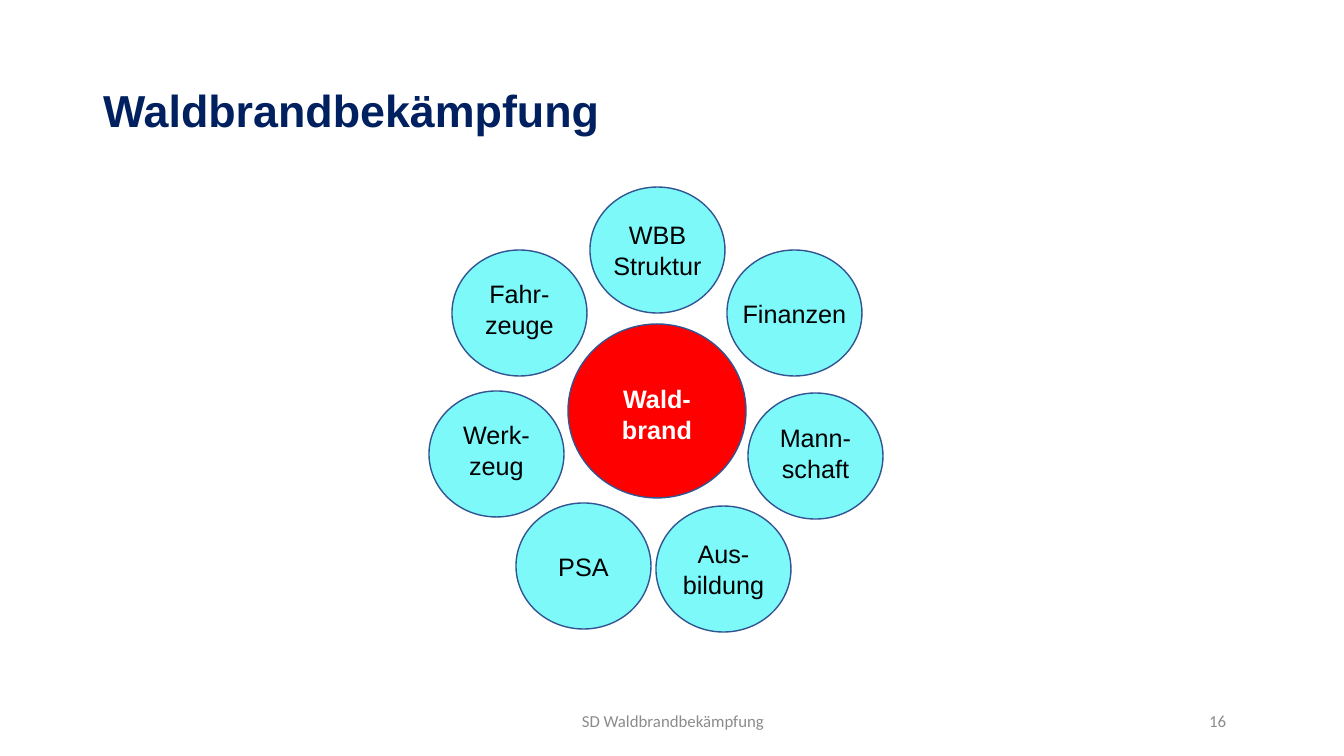
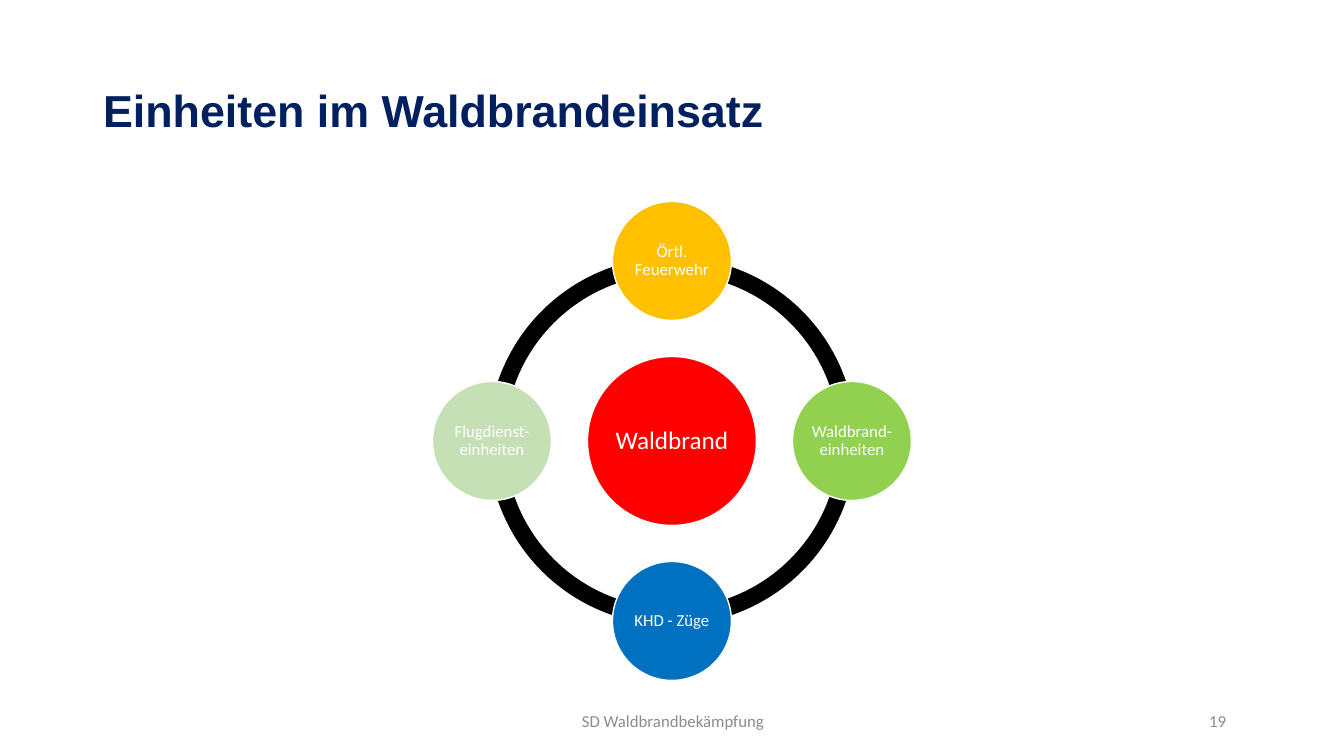
"""Build two slides on fighting forest fires, each a hub with circles around it."""
import math

from pptx import Presentation
from pptx.dml.color import RGBColor
from pptx.enum import shapes, text
from pptx.util import Pt

PX = 12192000 // 1344
COLORS = {
    "title": "002060", "footer": "8C8C8C", "fire": "FF0000", "petal": "7DF9F9",
    "outline": "325491", "black": "000000", "white": "FFFFFF", "amber": "FFC000",
    "green": "92D050", "blue": "0070C0", "sage": "C5E0B4",
}
COLORS = {name: RGBColor.from_string(value) for name, value in COLORS.items()}
SHAPE = shapes.MSO_SHAPE
ALIGN = text.PP_ALIGN


def write(shape, wording, size, color, font="Arial", bold=False,
          align=ALIGN.CENTER, spacing=1.0):
    frame = shape.text_frame
    frame.text = wording
    frame.word_wrap = True
    frame.auto_size = text.MSO_AUTO_SIZE.NONE
    frame.vertical_anchor = text.MSO_ANCHOR.MIDDLE
    para = frame.paragraphs[0]
    para.alignment = align
    para.line_spacing = spacing
    para.font.name = font
    para.font.size = Pt(size)
    para.font.bold = bold
    para.font.color.rgb = COLORS[color]
    return frame


def add_shape(page, kind, left, top, width, height, fill, line=None):
    shape = page.shapes.add_shape(
        kind, *(round(length * PX) for length in (left, top, width, height)))
    shape.shadow.inherit = False
    shape.fill.solid()
    shape.fill.fore_color.rgb = COLORS[fill]
    if line:
        shape.line.color.rgb = COLORS[line]
        shape.line.width = Pt(1)
    else:
        shape.line.fill.background()
    frame = shape.text_frame
    frame.margin_left = frame.margin_right = frame.margin_top = frame.margin_bottom = 0
    return shape


deck = Presentation()
deck.slide_width, deck.slide_height = 1344 * PX, 756 * PX

pages = []
for heading, number in (("Waldbrandbekämpfung", "16"), ("Einheiten im Waldbrandeinsatz", "19")):
    page = deck.slides.add_slide(deck.slide_layouts[5])
    title = page.shapes.title
    title.left, title.top, title.width, title.height = 93 * PX, 40 * PX, 1159 * PX, 146 * PX
    write(title, heading, 32, "title", bold=True, align=ALIGN.LEFT, spacing=0.9)
    for wording, left, width, align in (
        (number, 934, 302, ALIGN.RIGHT),
        ("SD Waldbrandbekämpfung", 446, 454, ALIGN.CENTER),
    ):
        box = page.shapes.add_textbox(left * PX, 701 * PX, width * PX, 40 * PX)
        write(box, wording, 12, "footer", font="Calibri", align=align)
    pages.append(page)
flower_page, ring_page = pages

hub = add_shape(flower_page, SHAPE.OVAL, 568, 324, 178, 174, "fire", "outline")
frame = write(hub, "Wald-brand", 18, "white", bold=True)
frame.margin_top = 6 * PX

petals = [
    ("WBB Struktur", 590, 187, 0),
    ("Finanzen", 727, 250, 0),
    ("Mann-schaft", 748, 393, 3),
    ("Aus-bildung", 656, 506, 0),
    ("PSA", 516, 503, 0),
    ("Werk-zeug", 429, 391, 4),
    ("Fahr-zeuge", 452, 250, 4),
]
for label, left, top, lift in petals:
    petal = add_shape(flower_page, SHAPE.OVAL, left, top, 135, 126, "petal", "outline")
    frame = write(petal, label, 18, "black")
    frame.word_wrap = len(label) > 8
    frame.margin_bottom = 2 * lift * PX

CENTER_X, CENTER_Y = 672, 441
ORBIT, RING, HUB, UNIT = 180, 368, 169, 119

for quarter in range(4):
    arc = add_shape(ring_page, SHAPE.BLOCK_ARC, CENTER_X - RING / 2, CENTER_Y - RING / 2,
                    RING, RING, "black")
    arc.adjustments[0] = quarter * 54
    arc.adjustments[1] = (quarter + 1) % 4 * 54
    arc.adjustments[2] = 0.046

circles = [("Waldbrand", "fire", 0, 0, HUB, 18)]
units = [
    ("Örtl. Feuerwehr", "amber"),
    ("Waldbrand-einheiten", "green"),
    ("KHD - Züge", "blue"),
    ("Flugdienst-einheiten", "sage"),
]
for index, (label, fill) in enumerate(units):
    angle = index * math.tau / len(units)
    circles.append((label, fill, ORBIT * math.sin(angle), -ORBIT * math.cos(angle), UNIT, 12))

for label, fill, across, down, size, points in circles:
    circle = add_shape(ring_page, SHAPE.OVAL, CENTER_X + across - size / 2,
                       CENTER_Y + down - size / 2, size, size, fill, "white")
    write(circle, label, points, "white", font="Calibri", spacing=0.9)

deck.save("out.pptx")
